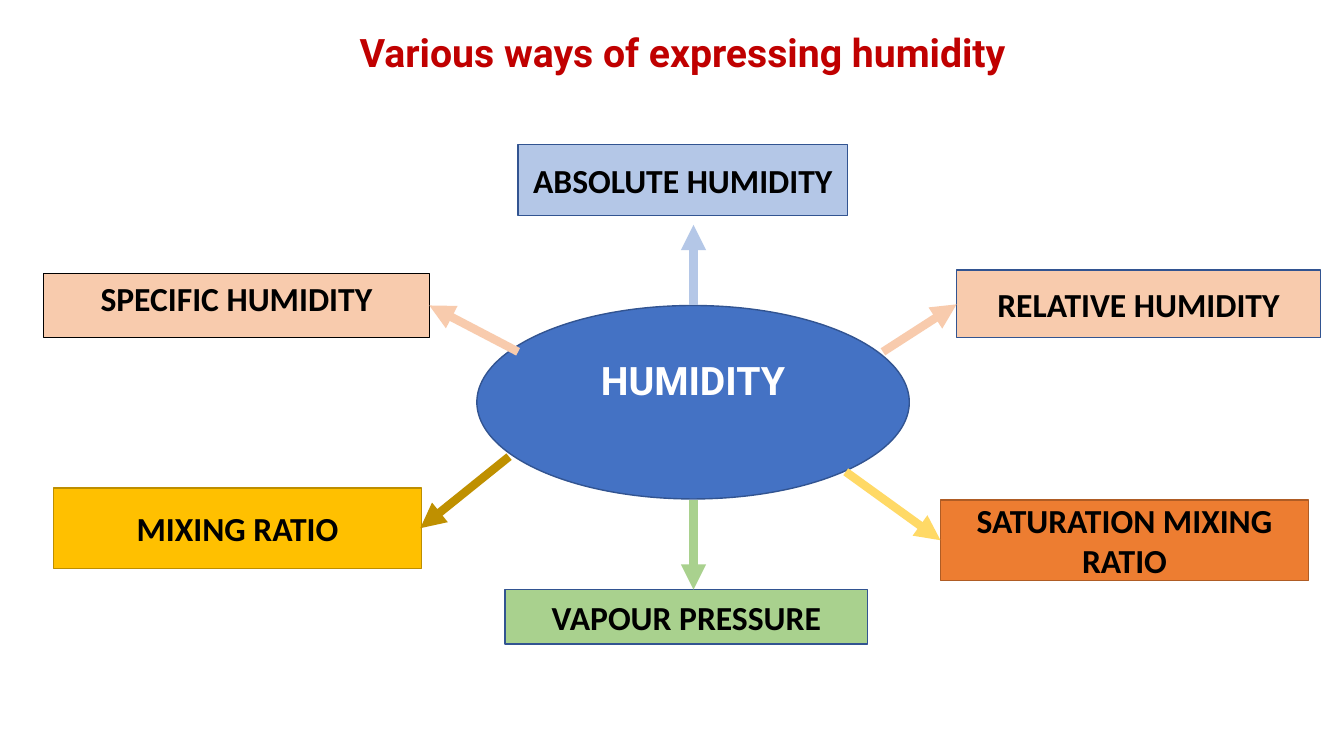
from dataclasses import dataclass

from pptx import Presentation
from pptx.dml.color import RGBColor
from pptx.enum.shapes import MSO_CONNECTOR, MSO_SHAPE
from pptx.enum.text import MSO_ANCHOR, MSO_AUTO_SIZE, PP_ALIGN
from pptx.oxml.ns import qn
from pptx.slide import Slide
from pptx.text.text import TextFrame
from pptx.util import Pt
from lxml import etree

RECTANGLE, OVAL = MSO_SHAPE.RECTANGLE, MSO_SHAPE.OVAL
STRAIGHT = MSO_CONNECTOR.STRAIGHT
TOP, MIDDLE = MSO_ANCHOR.TOP, MSO_ANCHOR.MIDDLE
CENTER = PP_ALIGN.CENTER
NO_AUTOFIT = MSO_AUTO_SIZE.NONE

BLACK = RGBColor(0x00, 0x00, 0x00)
WHITE = RGBColor(0xFF, 0xFF, 0xFF)
RED = RGBColor(0xC0, 0x00, 0x00)
BLUE = RGBColor(0x44, 0x72, 0xC4)
DARK_BLUE = RGBColor(0x32, 0x54, 0x91)
LIGHT_BLUE = RGBColor(0xB4, 0xC7, 0xE7)
GREEN = RGBColor(0xA9, 0xD1, 0x8E)
PEACH = RGBColor(0xF8, 0xCB, 0xAD)
GOLD = RGBColor(0xFF, 0xC0, 0x00)
GOLD_EDGE = RGBColor(0xBD, 0x8E, 0x00)
DARK_GOLD = RGBColor(0xBF, 0x90, 0x00)
PALE_GOLD = RGBColor(0xFF, 0xD9, 0x66)
ORANGE = RGBColor(0xED, 0x7D, 0x31)
ORANGE_EDGE = RGBColor(0xAF, 0x5C, 0x24)

HEADING_FONT = {"name": "Roboto", "size": Pt(28), "bold": True}
MEASURE_FONT = {"name": "Calibri", "size": Pt(24), "bold": True}

Box = tuple[float, float, float, float]
Point = tuple[float, float]


@dataclass(frozen=True)
class Measure:
    """A way of expressing humidity: its box and the arrow leading to it."""
    text: str
    box: Box
    fill: RGBColor
    edge: RGBColor
    arrow_start: Point
    arrow_end: Point
    arrow_color: RGBColor
    edge_width: float = 1
    anchor: MSO_ANCHOR = MIDDLE


MEASURES = [
    Measure("ABSOLUTE HUMIDITY", (370.1, 103, 235.4, 51.1), LIGHT_BLUE, DARK_BLUE,
            (495.4, 218.2), (495.4, 160.6), LIGHT_BLUE),
    Measure("VAPOUR PRESSURE", (360.7, 421.2, 259.2, 38.9), GREEN, DARK_BLUE,
            (495.4, 357.1), (495.4, 421.2), GREEN),
    Measure("RELATIVE HUMIDITY", (683.3, 193, 259.9, 48.2), PEACH, DARK_BLUE,
            (630.7, 251.3), (683.3, 217.4), PEACH),
    Measure("SPECIFIC HUMIDITY", (31, 195.1, 275.8, 46.1), PEACH, BLACK,
            (370.1, 251.3), (306.7, 218.2), PEACH, 0.75, TOP),
    Measure("MIXING RATIO", (38.2, 348.5, 262.8, 57.6), GOLD, GOLD_EDGE,
            (363.6, 326.2), (300.2, 377.3), DARK_GOLD),
    Measure("SATURATION MIXING RATIO", (671.8, 357.1, 262.8, 57.6), ORANGE, ORANGE_EDGE,
            (604.1, 337), (671.8, 385.9), PALE_GOLD),
]


def write_text(frame: TextFrame, text: str, font_format: dict, color: RGBColor,
               anchor: MSO_ANCHOR = TOP) -> None:
    frame.auto_size = NO_AUTOFIT
    frame.word_wrap = True
    frame.vertical_anchor = anchor
    paragraph = frame.paragraphs[0]
    paragraph.alignment = CENTER
    run = paragraph.add_run()
    run.text = text
    for attribute, value in font_format.items():
        setattr(run.font, attribute, value)
    run.font.color.rgb = color


def add_filled_shape(slide: Slide, kind: MSO_SHAPE, box: Box, fill: RGBColor,
                     edge: RGBColor, edge_width: float = 1) -> TextFrame:
    shape = slide.shapes.add_shape(kind, *map(Pt, box))
    shape.shadow.inherit = False
    shape.fill.solid()
    shape.fill.fore_color.rgb = fill
    shape.line.color.rgb = edge
    shape.line.width = Pt(edge_width)
    return shape.text_frame


def add_arrow(slide: Slide, start: Point, end: Point, color: RGBColor) -> None:
    arrow = slide.shapes.add_connector(STRAIGHT, *map(Pt, start + end))
    arrow.line.color.rgb = color
    arrow.line.width = Pt(6)
    properties = arrow.element.spPr
    etree.SubElement(properties.find(qn("a:ln")), qn("a:tailEnd"), type="triangle")
    etree.SubElement(properties, qn("a:effectLst"))


def add_title(slide: Slide) -> None:
    title = slide.shapes.title
    title_place = {"left": 31, "top": 16.6, "width": 913, "height": 41}
    for attribute, value in title_place.items():
        setattr(title, attribute, Pt(value))
    write_text(title.text_frame, "Various ways of expressing humidity", HEADING_FONT, RED)


def main() -> None:
    presentation = Presentation()
    presentation.slide_width, presentation.slide_height = Pt(960), Pt(540)
    slide = presentation.slides.add_slide(presentation.slide_layouts[5])
    add_title(slide)

    # Central concept
    add_filled_shape(slide, OVAL, (340.6, 218.2, 308.9, 138.2), BLUE, DARK_BLUE)
    humidity = slide.shapes.add_textbox(*map(Pt, (370.1, 251.3, 249.8, 41)))
    write_text(humidity.text_frame, "HUMIDITY", HEADING_FONT, WHITE)

    # Surrounding measures, each with its arrow
    for measure in MEASURES:
        frame = add_filled_shape(slide, RECTANGLE, measure.box, measure.fill,
                                 measure.edge, measure.edge_width)
        write_text(frame, measure.text, MEASURE_FONT, BLACK, measure.anchor)
        add_arrow(slide, measure.arrow_start, measure.arrow_end, measure.arrow_color)

    presentation.save("out.pptx")


if __name__ == "__main__":
    main()
